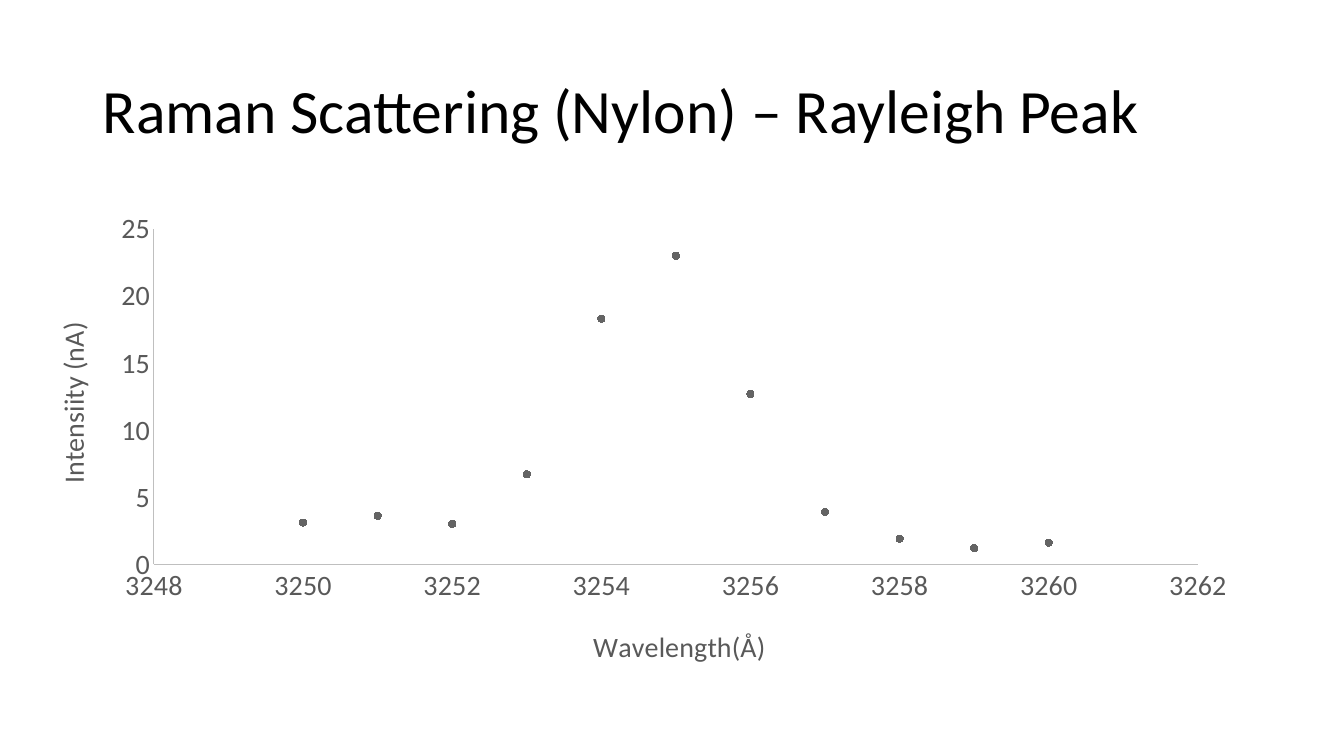
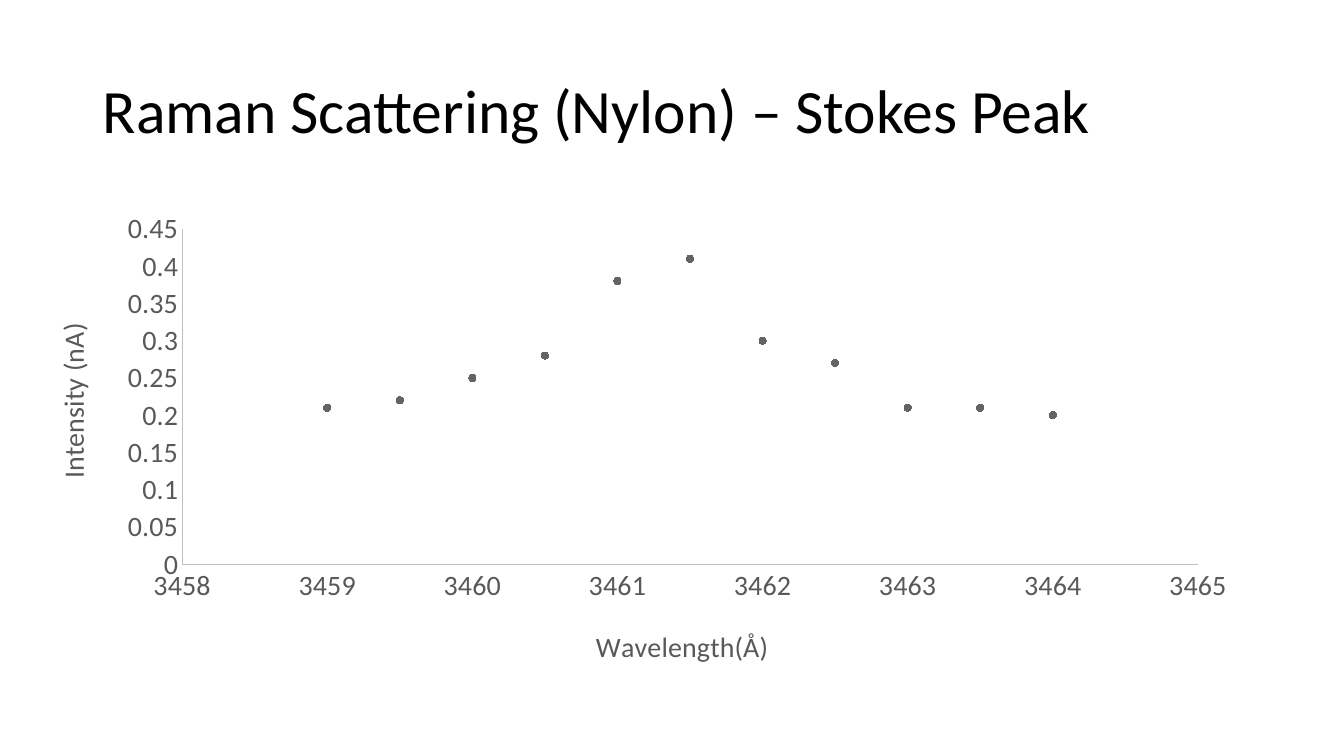
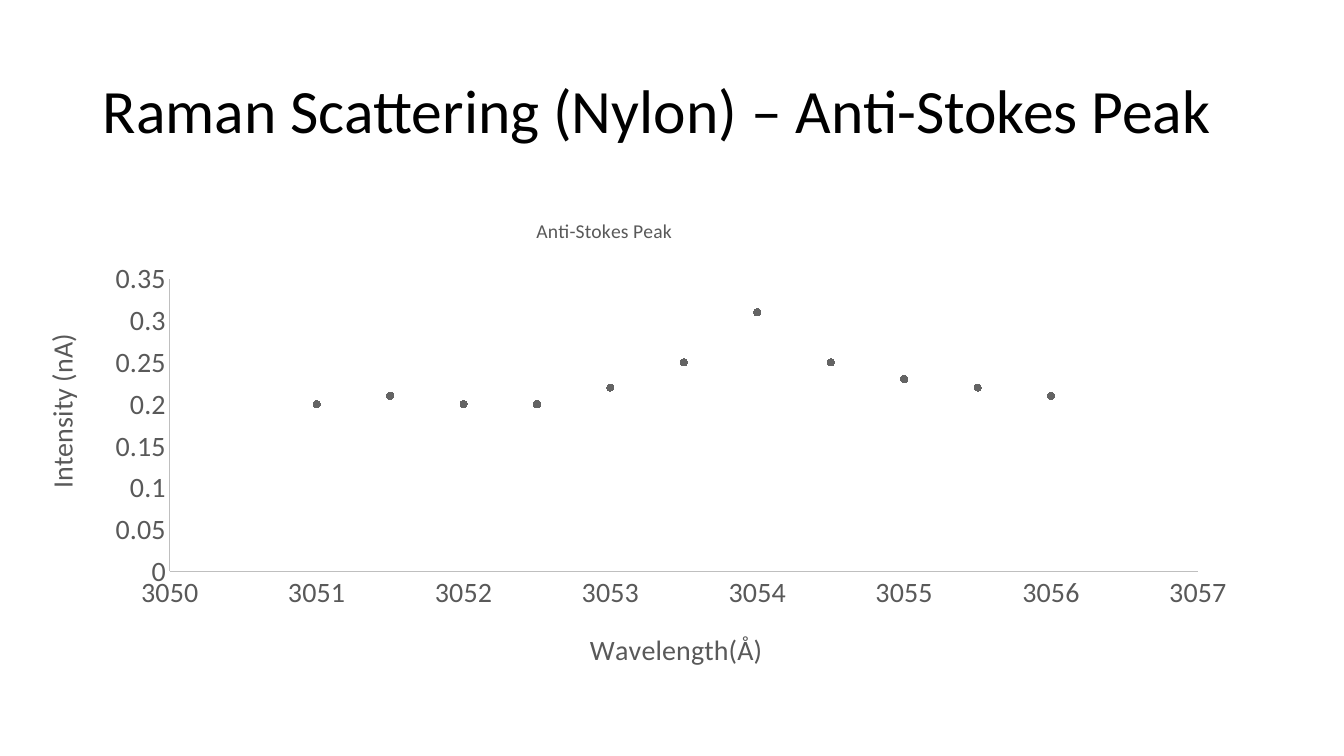
from dataclasses import dataclass

from lxml.etree import SubElement
from pptx import Presentation
from pptx.chart.data import XyChartData
from pptx.dml.color import RGBColor
from pptx.enum.chart import XL_CHART_TYPE as ChartType
from pptx.enum.chart import XL_MARKER_STYLE as Marker
from pptx.enum.chart import XL_TICK_MARK as TickMark
from pptx.enum.text import MSO_ANCHOR as Anchor
from pptx.enum.text import MSO_AUTO_SIZE as AutoSize
from pptx.enum.text import PP_ALIGN as Align
from pptx.oxml.ns import qn
from pptx.util import Cm, Pt


@dataclass(frozen=True)
class Theme:
    font: str = "Calibri"
    title_color: RGBColor = RGBColor(0x00, 0x00, 0x00)
    label_color: RGBColor = RGBColor(0x59, 0x59, 0x59)
    axis_color: RGBColor = RGBColor(0xBF, 0xBF, 0xBF)
    point_color: RGBColor = RGBColor(0x64, 0x64, 0x64)
    title_size: int = 44
    axis_size: int = 20
    caption_size: int = 14


THEME = Theme()


@dataclass(frozen=True)
class Box:
    """A rectangle in centimetres."""
    left: float
    top: float
    width: float = 0
    height: float = 0

    def lengths(self):
        return Cm(self.left), Cm(self.top), Cm(self.width), Cm(self.height)


@dataclass(frozen=True)
class Scale:
    low: float
    high: float
    step: float


@dataclass(frozen=True)
class Peak:
    """One measured peak; the inner boxes are relative to the chart frame."""
    name: str
    frame: Box
    plot: Box
    x_label: Box
    y_label: Box
    x_scale: Scale
    y_scale: Scale
    first: float
    spacing: float
    readings: tuple
    y_text: str = "Intensity (nA)"
    caption: str = ""
    caption_box: Box = Box(0, 0)


TITLE_BOX = Box(2.34, 1.02, 29.21, 3.68)

PEAKS = (
    Peak("Rayleigh Peak",
         frame=Box(0.89, 5.08, 30.66, 12.09),
         plot=Box(2.99, 0.69, 26.31, 8.45),
         x_label=Box(13.93, 10.6), y_label=Box(0.32, 2.91),
         x_scale=Scale(3248, 3262, 2), y_scale=Scale(0, 25, 5),
         first=3250, spacing=1,
         readings=(3.1, 3.6, 3, 6.7, 18.3, 23, 12.7, 3.9, 1.9, 1.2, 1.6),
         y_text="Intensiity (nA)"),
    Peak("Stokes Peak",
         frame=Box(1.04, 5.08, 30.5, 12.09),
         plot=Box(3.55, 0.69, 25.6, 8.45),
         x_label=Box(13.85, 10.6), y_label=Box(0.17, 2.94),
         x_scale=Scale(3458, 3465, 1), y_scale=Scale(0, 0.45, 0.05),
         first=3459, spacing=0.5,
         readings=(0.21, 0.22, 0.25, 0.28, 0.38, 0.41,
                   0.3, 0.27, 0.21, 0.21, 0.2)),
    Peak("Anti-Stokes Peak",
         frame=Box(0.74, 5.08, 30.81, 12.09),
         plot=Box(3.54, 1.95, 25.91, 7.37),
         x_label=Box(14, 10.67), y_label=Box(0.19, 3.2),
         x_scale=Scale(3050, 3057, 1), y_scale=Scale(0, 0.35, 0.05),
         first=3056, spacing=-0.5,
         readings=(0.21, 0.22, 0.23, 0.25, 0.31, 0.25,
                   0.22, 0.2, 0.2, 0.21, 0.2),
         caption="Anti-Stokes Peak", caption_box=Box(12.69, 0.31)),
)


def style_font(font, size, color):
    font.name = THEME.font
    font.size = Pt(size)
    font.bold = False
    font.color.rgb = color


def place_part(part, box, frame):
    """Give a chart part a manual layout inside the chart frame."""
    for old in part.findall(qn("c:layout")):
        part.remove(old)
    layout = SubElement(part, qn("c:layout"))
    part.insert(0 if part.find(qn("c:tx")) is None else 1, layout)
    manual = SubElement(layout, qn("c:manualLayout"))
    settings = {"xMode": "edge", "yMode": "edge",
                "x": box.left / frame.width, "y": box.top / frame.height}
    if box.width:
        settings = {"layoutTarget": "inner", **settings,
                    "w": box.width / frame.width,
                    "h": box.height / frame.height}
    for name, value in settings.items():
        SubElement(manual, qn(f"c:{name}")).set("val", str(value))


def write_label(label, text, size, box, frame, rotation=0):
    label.text_frame.text = text
    style_font(label.text_frame.paragraphs[0].runs[0].font,
               size, THEME.label_color)
    body = label.element.find(".//" + qn("a:bodyPr"))
    body.set("rot", str(rotation * 60000))
    body.set("vert", "horz")
    place_part(label.element, box, frame)


def style_axis(axis, scale):
    axis.minimum_scale = scale.low
    axis.maximum_scale = scale.high
    axis.major_unit = scale.step
    axis.has_major_gridlines = False
    axis.major_tick_mark = axis.minor_tick_mark = TickMark.NONE
    axis.format.line.color.rgb = THEME.axis_color
    axis.format.line.width = Pt(0.75)
    axis.tick_labels.number_format = "General"
    axis.tick_labels.number_format_is_linked = False
    style_font(axis.tick_labels.font, THEME.axis_size, THEME.label_color)


def add_title(page, text, box):
    title = page.shapes.title
    title.left, title.top, title.width, title.height = box.lengths()
    frame = title.text_frame
    frame.text = text
    frame.word_wrap = True
    frame.auto_size = AutoSize.NONE
    frame.vertical_anchor = Anchor.MIDDLE
    para = frame.paragraphs[0]
    para.alignment = Align.LEFT
    para.line_spacing = 0.9
    style_font(para.runs[0].font, THEME.title_size, THEME.title_color)


def add_peak_chart(page, peak, box):
    data = XyChartData()
    points = data.add_series("Series 1")
    for index, reading in enumerate(peak.readings):
        points.add_data_point(peak.first + index * peak.spacing, reading)
    chart = page.shapes.add_chart(
        ChartType.XY_SCATTER, *box.lengths(), data).chart
    chart.has_legend = False
    chart.font.name = THEME.font
    chart.font.size = Pt(10)

    # Points without a joining line
    plot = chart.plots[0]
    plot.vary_by_categories = False
    series = plot.series[0]
    series.smooth = False
    series.format.line.fill.background()
    series.marker.style = Marker.CIRCLE
    series.marker.size = 5
    series.marker.format.fill.solid()
    series.marker.format.fill.fore_color.rgb = THEME.point_color
    series.marker.format.line.color.rgb = THEME.point_color
    place_part(chart.element.find(".//" + qn("c:plotArea")), peak.plot, box)

    # Axes and their labels
    style_axis(chart.category_axis, peak.x_scale)
    style_axis(chart.value_axis, peak.y_scale)
    write_label(chart.category_axis.axis_title, "Wavelength(Å)",
                THEME.axis_size, peak.x_label, box)
    write_label(chart.value_axis.axis_title, peak.y_text,
                THEME.axis_size, peak.y_label, box, rotation=-90)

    # Caption over the plot
    chart.has_title = bool(peak.caption)
    if peak.caption:
        write_label(chart.chart_title, peak.caption,
                    THEME.caption_size, peak.caption_box, box)


def add_peak_page(deck, peak):
    page = deck.slides.add_slide(deck.slide_layouts.get_by_name("Title Only"))
    add_title(page, f"Raman Scattering (Nylon) – {peak.name}", TITLE_BOX)
    add_peak_chart(page, peak, peak.frame)


def main():
    deck = Presentation()
    deck.slide_width, deck.slide_height = Cm(33.87), Cm(19.05)
    for peak in PEAKS:
        add_peak_page(deck, peak)
    deck.save("out.pptx")


if __name__ == "__main__":
    main()
